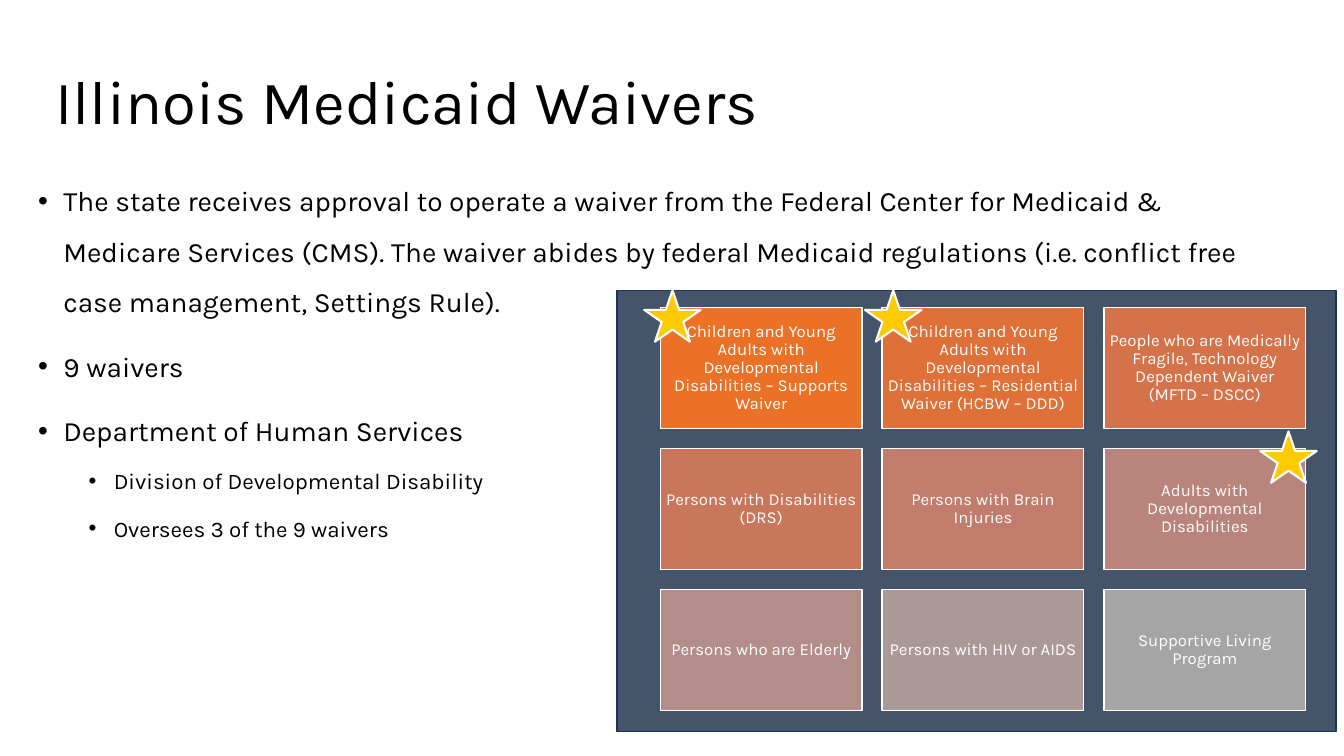
from lxml.etree import SubElement
from pptx import Presentation
from pptx.dml.color import RGBColor
from pptx.enum.shapes import MSO_SHAPE
from pptx.enum.text import MSO_ANCHOR, PP_ALIGN
from pptx.oxml.ns import qn
from pptx.util import Inches, Pt

FONT = "Karla"
COLORS = {
    "ink": "000000",
    "white": "FFFFFF",
    "panel": "44546A",
    "panel_edge": "1E3256",
    "star": "FECB00",
}
GRID_LEFT, GRID_TOP = 6.55, 3.05
COLUMN_STEP, ROW_STEP = 2.2, 1.4
CARD_WIDTH, CARD_HEIGHT = 2, 1.2
GRID_COLUMNS = 3

WAIVERS = [
    ("Children and Young Adults with Developmental Disabilities – Supports Waiver", "EA7125"),
    ("Children and Young Adults with Developmental Disabilities – Residential Waiver (HCBW – DDD)", "DF7038"),
    ("People who are Medically Fragile, Technology Dependent Waiver (MFTD – DSCC)", "D4724A"),
    ("Persons with Disabilities (DRS)", "CA765B"),
    ("Persons with Brain Injuries", "C17C6B"),
    ("Adults with Developmental Disabilities", "B9847B"),
    ("Persons who are Elderly", "B28D8A"),
    ("Persons with HIV or AIDS", "AB9998"),
    ("Supportive Living Program", "A5A5A5"),
]
POINTS = [
    (0, "The state receives approval to operate a waiver from the Federal Center for "
        "Medicaid & Medicare Services (CMS). The waiver abides by federal Medicaid "
        "regulations (i.e. conflict free case management, Settings Rule)."),
    (0, "9 waivers"),
    (0, "Department of Human Services"),
    (1, "Division of Developmental Disability"),
    (1, "Oversees 3 of the 9 waivers"),
]
LEVELS = [
    {"size": 20, "before": 10, "indent": 0.25},
    {"size": 16, "before": 5, "indent": 0.75},
]
STARS = [(0, 0, -0.16), (1, 0, -0.17), (2, 1, 1.55)]


def style_text(paragraph, size, color, spacing):
    paragraph.line_spacing = spacing
    paragraph.font.name = FONT
    paragraph.font.size = Pt(size)
    paragraph.font.color.rgb = RGBColor.from_string(COLORS[color])


def add_text_area(slide, left, top, width, height):
    area = slide.shapes.add_textbox(*map(Inches, (left, top, width, height)))
    area.text_frame.word_wrap = True
    return area.text_frame


def add_filled_shape(slide, kind, box, fill, edge, edge_width):
    shape = slide.shapes.add_shape(kind, *map(Inches, box))
    shape.shadow.inherit = False
    shape.fill.solid()
    shape.fill.fore_color.rgb = RGBColor.from_string(fill)
    shape.line.color.rgb = RGBColor.from_string(COLORS[edge])
    shape.line.width = Pt(edge_width)
    return shape


def add_title(slide, wording):
    title = add_text_area(slide, 0.45, 0.31, 11.5, 1.45)
    title.vertical_anchor = MSO_ANCHOR.MIDDLE
    title.text = wording
    style_text(title.paragraphs[0], 44, "ink", 0.9)


def add_points(slide):
    body = add_text_area(slide, 0.28, 1.61, 12.52, 4.76)
    for number, (level, wording) in enumerate(POINTS):
        point = body.add_paragraph() if number else body.paragraphs[0]
        rule = LEVELS[level]
        point.text = wording
        point.level = level
        properties = point._p.get_or_add_pPr()
        properties.set("marL", str(Inches(rule["indent"])))
        properties.set("indent", str(Inches(-0.25)))
        SubElement(properties, qn("a:buFont")).set("typeface", "Arial")
        SubElement(properties, qn("a:buChar")).set("char", "•")
        if number:
            point.space_before = Pt(rule["before"])
        style_text(point, rule["size"], "ink", 1.5)


def grid_corner(column, row):
    return GRID_LEFT + column * COLUMN_STEP, GRID_TOP + row * ROW_STEP


def add_waiver(slide, position, wording, fill):
    row, column = divmod(position, GRID_COLUMNS)
    box = (*grid_corner(column, row), CARD_WIDTH, CARD_HEIGHT)
    card = add_filled_shape(slide, MSO_SHAPE.RECTANGLE, box, fill, "white", 1)
    frame = card.text_frame
    frame.word_wrap = True
    frame.vertical_anchor = MSO_ANCHOR.MIDDLE
    frame.margin_left = frame.margin_right = Inches(0.05)
    frame.margin_top = frame.margin_bottom = Inches(0.05)
    frame.text = wording
    frame.paragraphs[0].alignment = PP_ALIGN.CENTER
    style_text(frame.paragraphs[0], 12, "white", 0.9)


def add_star(slide, column, row, shift):
    left, top = grid_corner(column, row)
    box = (left + shift, top - 0.17, 0.56, 0.51)
    add_filled_shape(slide, MSO_SHAPE.STAR_5_POINT, box, COLORS["star"], "white", 1.5)


def main():
    deck = Presentation()
    deck.slide_width, deck.slide_height = Inches(13.33), Inches(7.5)
    slide = deck.slides.add_slide(deck.slide_layouts[6])
    add_title(slide, "Illinois Medicaid Waivers")
    add_points(slide)
    add_filled_shape(slide, MSO_SHAPE.RECTANGLE, (6.12, 2.88, 7.13, 4.38),
                     COLORS["panel"], "panel_edge", 1)
    for position, (wording, fill) in enumerate(WAIVERS):
        add_waiver(slide, position, wording, fill)
    for column, row, shift in STARS:
        add_star(slide, column, row, shift)
    deck.save("out.pptx")


if __name__ == "__main__":
    main()
